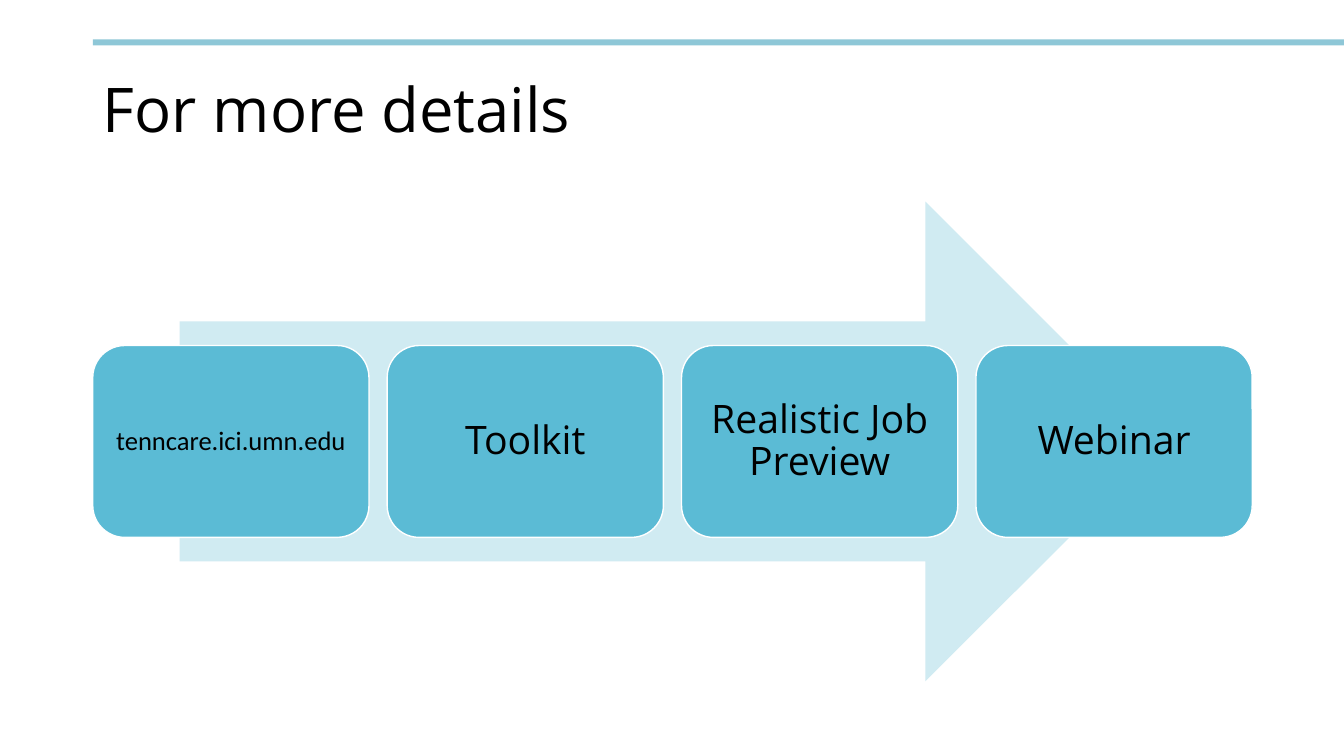
from pptx import Presentation
from pptx.dml.color import RGBColor
from pptx.enum.shapes import MSO_SHAPE
from pptx.enum.text import MSO_ANCHOR, PP_ALIGN
from pptx.util import Inches, Pt

RECTANGLE = MSO_SHAPE.RECTANGLE
ARROW = MSO_SHAPE.RIGHT_ARROW
ROUNDED = MSO_SHAPE.ROUNDED_RECTANGLE
MIDDLE = MSO_ANCHOR.MIDDLE
LEFT, CENTER = PP_ALIGN.LEFT, PP_ALIGN.CENTER

BLACK = RGBColor(0x00, 0x00, 0x00)
WHITE = RGBColor(0xFF, 0xFF, 0xFF)
STRIPE_BLUE = RGBColor(0x8E, 0xC7, 0xD7)
ARROW_BLUE = RGBColor(0xD0, 0xEB, 0xF2)
CARD_BLUE = RGBColor(0x5B, 0xBB, 0xD5)

PAGE_WIDTH, PAGE_HEIGHT = 13.33, 7.5
CARD_GAP = 0.18
RESOURCES = [
    ("tenncare.ici.umn.edu", "Calibri", 19, 0.08),
    ("Toolkit", "Open Sans", 28, 0.12),
    ("Realistic Job Preview", "Open Sans", 28, 0.12),
    ("Webinar", "Open Sans", 28, 0.12),
]


def add_filled_shape(page, kind, box, color):
    """Add a flat preset shape without outline in the given box."""
    shape = page.shapes.add_shape(kind, *map(Inches, box))
    shape.shadow.inherit = False
    shape.fill.solid()
    shape.fill.fore_color.rgb = color
    shape.line.fill.background()
    return shape


def write_text(shape, text, font_name, size, alignment):
    """Write one vertically centred black paragraph into a shape."""
    frame = shape.text_frame
    frame.word_wrap = True
    frame.vertical_anchor = MIDDLE
    para = frame.paragraphs[0]
    para.text = text
    para.alignment = alignment
    para.line_spacing = 0.9
    para.font.name = font_name
    para.font.size = Pt(size)
    para.font.color.rgb = BLACK


def add_header(page, box):
    """Add the title and the stripe that runs to the right page edge."""
    left, top, width, height = box
    stripe = (left, top, PAGE_WIDTH - left, 0.06)
    add_filled_shape(page, RECTANGLE, stripe, STRIPE_BLUE)
    title = page.shapes.add_textbox(*map(Inches, (left, top, width, height)))
    write_text(title, "For more details", "Open Sans", 44, LEFT)


def add_resource_arrow(page, box):
    """Add the wide arrow with a row of resource cards across its middle."""
    left, top, width, height = box
    arrow_width = width * 0.85
    arrow_left = left + (width - arrow_width) / 2
    add_filled_shape(page, ARROW, (arrow_left, top, arrow_width, height), ARROW_BLUE)

    count = len(RESOURCES)
    card_width = (width - CARD_GAP * (count - 1)) / count
    card_height = height * 0.4
    card_top = top + (height - card_height) / 2
    for index, (label, font_name, size, inset) in enumerate(RESOURCES):
        card_left = left + index * (card_width + CARD_GAP)
        card_box = (card_left, card_top, card_width, card_height)
        card = add_filled_shape(page, ROUNDED, card_box, CARD_BLUE)
        card.line.color.rgb = WHITE
        card.line.width = Pt(1)
        frame = card.text_frame
        frame.margin_left = frame.margin_right = Inches(inset)
        frame.margin_top = frame.margin_bottom = Inches(inset)
        write_text(card, label, font_name, size, CENTER)


def main():
    """Build and save the one-page deck."""
    deck = Presentation()
    deck.slide_width = Inches(PAGE_WIDTH)
    deck.slide_height = Inches(PAGE_HEIGHT)
    page = deck.slides.add_slide(deck.slide_layouts[6])
    add_header(page, (0.92, 0.39, 11.5, 1.45))
    add_resource_arrow(page, (0.92, 2, 11.5, 4.76))
    deck.save("out.pptx")


if __name__ == "__main__":
    main()
